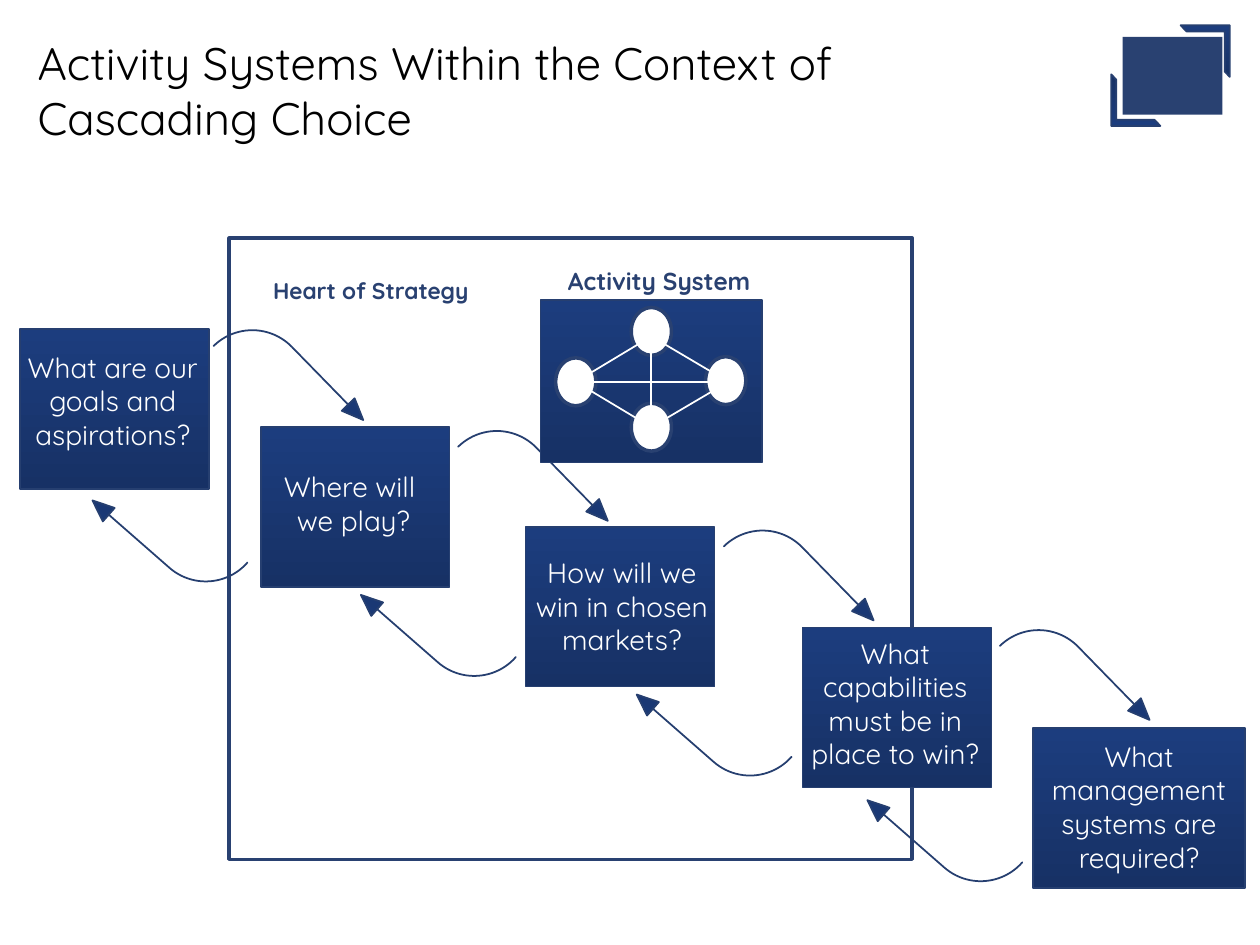
from pptx import Presentation
from pptx.dml.color import RGBColor as RGB
from pptx.enum.shapes import MSO_CONNECTOR as LINK, MSO_SHAPE as KIND
from pptx.enum.text import MSO_AUTO_SIZE as SIZE, PP_ALIGN as ALIGN
from pptx.oxml.ns import qn
from pptx.util import Pt
from lxml.etree import SubElement

NAVY = RGB(0x29, 0x41, 0x71)
DARK = RGB(0x17, 0x31, 0x65)
BLUE = RGB(0x1C, 0x3D, 0x7E)
EDGE = RGB(0x26, 0x3F, 0x70)
WHITE = RGB(0xFF, 0xFF, 0xFF)
BLACK = RGB(0, 0, 0)

deck = Presentation()
deck.slide_width, deck.slide_height = Pt(720), Pt(540)
slide = deck.slides.add_slide(deck.slide_layouts[6])
shapes = slide.shapes


def draw(kind, box, fill=None, edge=EDGE, width=1, turn=0, adjust=()):
    """Add a preset shape; without a fill it gets the blue gradient."""
    shape = shapes.add_shape(kind, *map(Pt, box))
    shape.shadow.inherit = False
    shape.rotation = turn
    for i, value in enumerate(adjust):
        shape.adjustments[i] = value
    if fill is None:
        shape.fill.gradient()
        shape.fill.gradient_angle = 90
        for stop, color, place in zip(shape.fill.gradient_stops, (DARK, BLUE), (0, 1)):
            stop.color.rgb = color
            stop.position = place
    else:
        shape.fill.solid()
        shape.fill.fore_color.rgb = fill
    shape.line.color.rgb = edge
    shape.line.width = Pt(width)
    return shape


def write(box, lines, size, color, bold=False, align=ALIGN.LEFT):
    frame = shapes.add_textbox(*map(Pt, box)).text_frame
    frame.word_wrap = True
    frame.auto_size = SIZE.SHAPE_TO_FIT_TEXT
    for i, line in enumerate(lines):
        para = frame.add_paragraph() if i else frame.paragraphs[0]
        para.alignment = align
        run = para.add_run()
        run.text = line
        run.font.name = "Quicksand"
        run.font.size = Pt(size)
        run.font.bold = bold
        run.font.color.rgb = color


# Title and corner emblem
emblem = draw(KIND.RECTANGLE, (641.5, 21, 57, 44.6), NAVY)
emblem.line.fill.background()
for left, top, turn in ((635, 42.5, 0), (674.6, 14.4, 180)):
    corner = draw(KIND.HALF_FRAME, (left, top, 28.1, 29.5), turn=turn, adjust=(0.126, 0.103))
    corner._element.spPr.xfrm.set("flipV", "1")
write((14.4, 16.6, 592, 70.6),
      ["Activity Systems Within the Context of Cascading Choice"], 26, BLACK)

# Strategy frame
draw(KIND.RECTANGLE, (131, 136.1, 390.2, 355), WHITE, NAVY, 2)
write((149, 154.8, 151.2, 23), ["Heart of Strategy"], 13, NAVY, True)

# Cascade of choices: box left, top, width; text left, top, width, height
steps = [
    (11.5, 188, 108, 3.6, 196.6, 121.7, 65.5, ["What are our goals and aspirations?"]),
    (149, 244, 108, 141.1, 265, 121.7, 46, ["Where will ", "we play?"]),
    (300.4, 301, 108, 294.5, 313.9, 121.7, 65.5, ["How will we win in chosen markets?"]),
    (458.6, 358.6, 108, 450.7, 360, 121.7, 85, ["What capabilities must be in place to win?"]),
    (590.4, 416.2, 121, 583.9, 419, 133.9, 85, ["What management systems are required?"]),
]
for left, top, width, *area, lines in steps:
    draw(KIND.RECTANGLE, (left, top, width, 91.4))
    write(area, lines, 16, WHITE, align=ALIGN.CENTER)

# Curved arrows: down the cascade, then back up
paths = {
    45.7: [(121.7, 198.7), (261.4, 256.3), (413.3, 313.2), (571, 370.1)],
    221.2: [(50.4, 287.3), (203.8, 341.3), (361.4, 398.2), (493.2, 458.6)],
}
for turn, spots in paths.items():
    for left, top in spots:
        draw(KIND.BENT_ARROW, (left, top, 90, 36.7), turn=turn,
             adjust=(0, 0.14, 0.336, 0.875))

# Activity system network
write((317.5, 148.3, 126.7, 24.5), ["Activity System"], 14, NAVY, True)
draw(KIND.RECTANGLE, (308.9, 171.4, 126.7, 92.9))
for left, top in ((317.5, 204.5), (360.7, 230.4), (360.7, 175.7), (403.2, 203.8)):
    draw(KIND.OVAL, (left, top, 23, 27.4), WHITE, NAVY, 2)
west, east = (329, 218.2), (416.2, 218.2)
north, south = (372.2, 192.2), (372.2, 244.1)
links = [(west, south), (north, east), (north, west),
         (east, south), (north, south), (west, east)]
for start, end in links:
    link = shapes.add_connector(LINK.STRAIGHT, *map(Pt, start + end))
    link.line.color.rgb = WHITE
    link.line.width = Pt(1)
    SubElement(link._element.spPr, qn("a:effectLst"))

deck.save("out.pptx")
